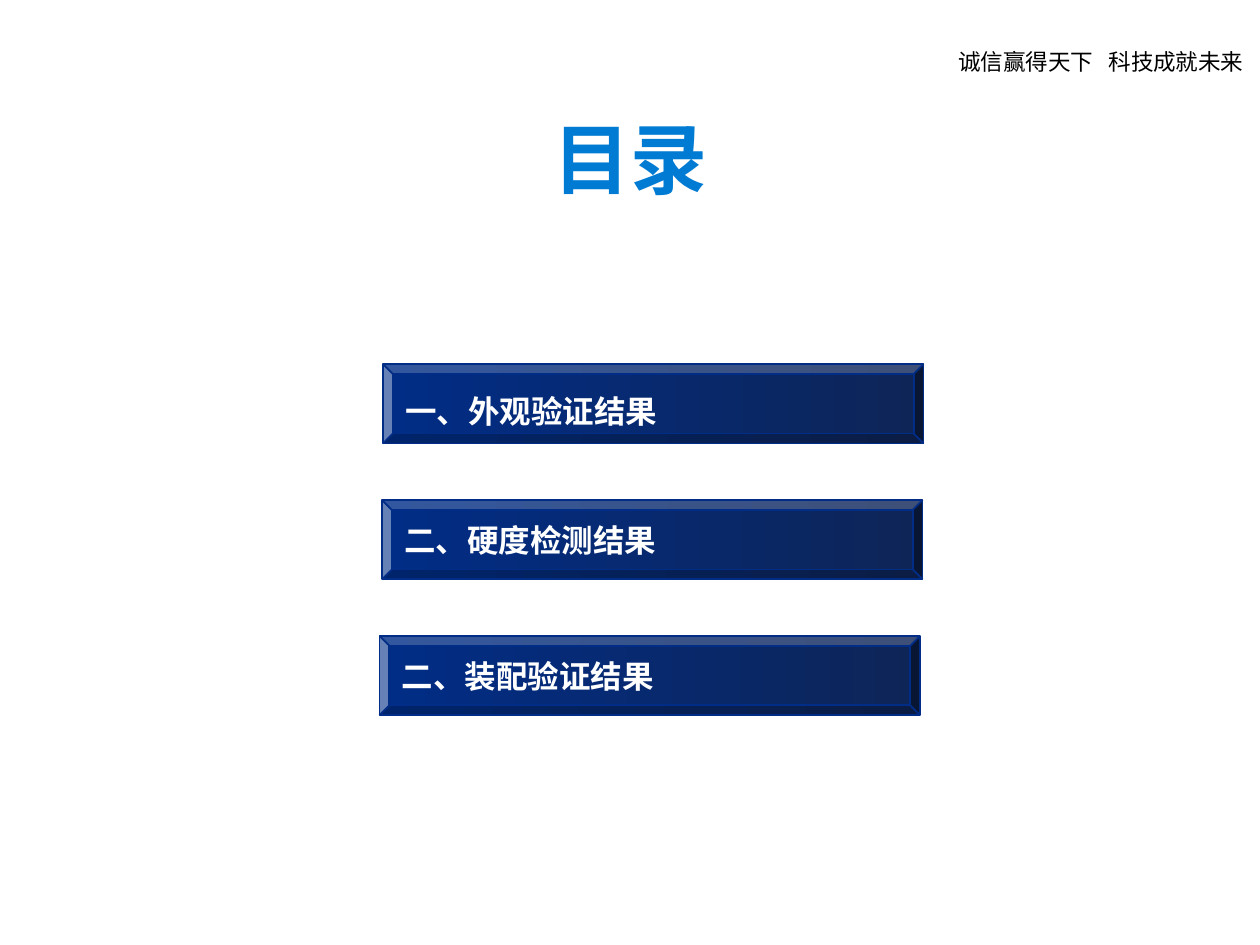
import dataclasses
from typing import Optional

import pptx
import pptx.dml.color
import pptx.enum.shapes
import pptx.enum.text
import pptx.oxml
import pptx.oxml.ns
import pptx.util
from pptx.util import Cm, Pt

COLOURS = {
    "black": "000000",
    "white": "FFFFFF",
    "title": "007BD3",
    "bar_start": "012D86",
    "bar_end": "0E2557",
}
CJK_FONT = "Noto Sans CJK SC"
BAR_TOP, BAR_PITCH = 7.34, 2.74
BAR_WIDTH, BAR_HEIGHT = 10.9, 1.6


@dataclasses.dataclass
class Entry:
    text: str
    left: float
    line_spacing: Optional[float] = None


ENTRIES = [
    Entry("一、外观验证结果", 7.72, 30),
    Entry("二、硬度检测结果", 7.7),
    Entry("二、装配验证结果", 7.65),
]


def colour(name: str) -> pptx.dml.color.RGBColor:
    return pptx.dml.color.RGBColor.from_string(COLOURS[name])


def style_paragraph(para, size: float, colour_name: str, bold: bool = False,
                    font_name: str = CJK_FONT) -> None:
    """Set the Latin and the East Asian font together with size and colour."""
    font = para.font
    font.size = Pt(size)
    font.bold = bold
    font.color.rgb = colour(colour_name)
    font.name = font_name
    properties = para._p.pPr.find(pptx.oxml.ns.qn("a:defRPr"))
    east_asian = pptx.oxml.parse_xml(
        f'<a:ea {pptx.oxml.ns.nsdecls("a")} typeface="{CJK_FONT}"/>')
    properties.find(pptx.oxml.ns.qn("a:latin")).addnext(east_asian)


def add_motto(slide) -> None:
    box = slide.shapes.add_textbox(Cm(19.07), Cm(0.84), Cm(6.36), Cm(0.81))
    box.text_frame.word_wrap = False
    para = box.text_frame.paragraphs[0]
    para.text = "诚信赢得天下\t科技成就未来"
    para.alignment = pptx.enum.text.PP_ALIGN.LEFT
    para._p.get_or_add_pPr().append(pptx.oxml.parse_xml(
        f'<a:tabLst {pptx.oxml.ns.nsdecls("a")}>'
        f'<a:tab pos="{Cm(3.03)}" algn="l"/></a:tabLst>'))
    style_paragraph(para, 12.9, "black")


def add_title(slide) -> None:
    box = slide.shapes.add_textbox(Cm(10.9), Cm(2.13), Cm(4.22), Cm(2.13))
    box.text_frame.word_wrap = True
    para = box.text_frame.paragraphs[0]
    para.text = "目录"
    style_paragraph(para, 44, "title", bold=True, font_name="Arial")


def add_entry_bar(slide, entry: Entry, top: float) -> None:
    bar = slide.shapes.add_shape(
        pptx.enum.shapes.MSO_SHAPE.BEVEL,
        Cm(entry.left), Cm(top), Cm(BAR_WIDTH), Cm(BAR_HEIGHT))
    bar.shadow.inherit = False
    bar.fill.gradient()
    bar.fill.gradient_angle = 0
    for stop, name in zip(bar.fill.gradient_stops, ("bar_start", "bar_end")):
        stop.color.rgb = colour(name)
    bar.line.color.rgb = colour("bar_start")
    bar.line.width = Pt(1)

    frame = bar.text_frame
    frame.word_wrap = True
    frame.vertical_anchor = pptx.enum.text.MSO_ANCHOR.MIDDLE
    para = frame.paragraphs[0]
    para.text = entry.text
    para.alignment = pptx.enum.text.PP_ALIGN.LEFT
    if entry.line_spacing:
        para.line_spacing = Pt(entry.line_spacing)
    style_paragraph(para, 18, "white", bold=True)


def main() -> None:
    deck = pptx.Presentation()
    deck.slide_width, deck.slide_height = Cm(25.4), Cm(19.05)
    slide = deck.slides.add_slide(deck.slide_layouts[6])
    add_motto(slide)
    add_title(slide)
    for index, entry in enumerate(ENTRIES):
        add_entry_bar(slide, entry, BAR_TOP + index * BAR_PITCH)
    deck.save("out.pptx")


if __name__ == "__main__":
    main()
